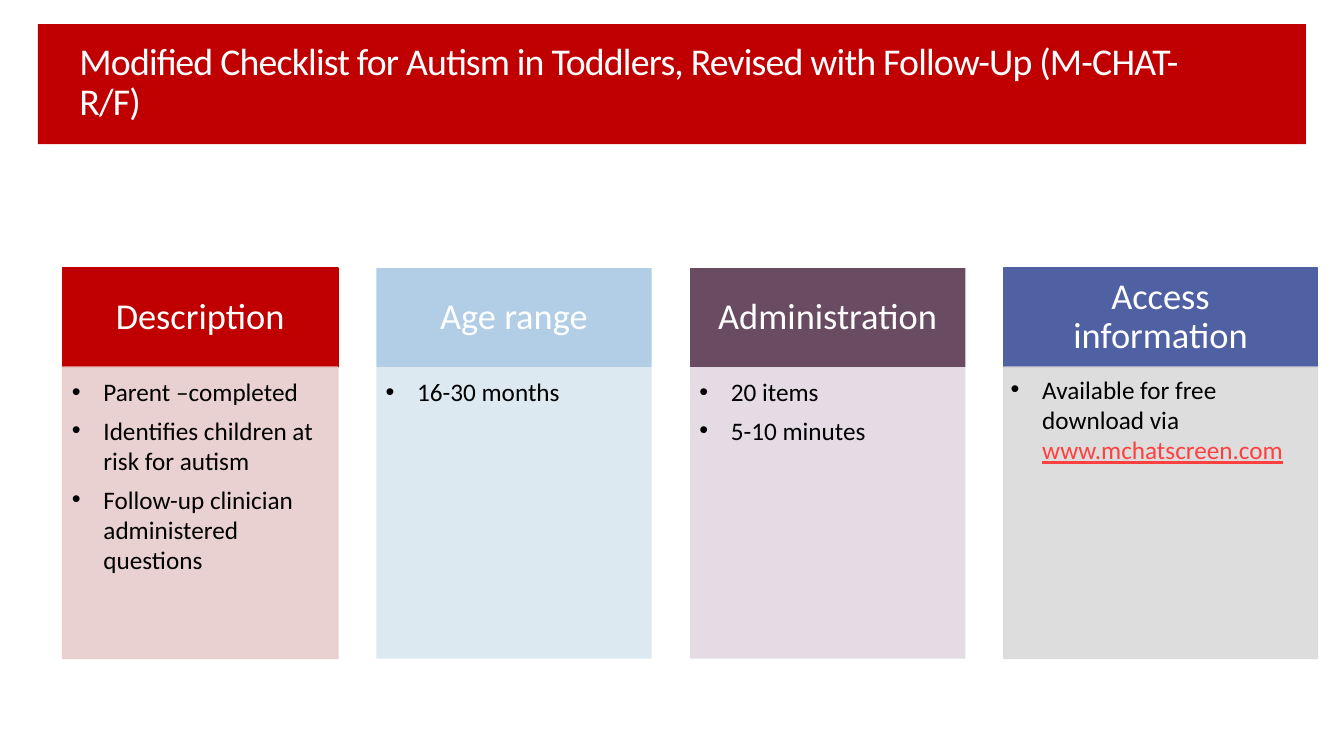
"""Build the M-CHAT-R/F overview slide with four described columns."""
from dataclasses import dataclass

from pptx import Presentation
from pptx.dml.color import RGBColor
from pptx.enum.shapes import MSO_SHAPE
from pptx.enum.text import MSO_ANCHOR as Anchor, PP_ALIGN as Align
from pptx.oxml.ns import qn
from pptx.oxml.xmlchemy import OxmlElement
from pptx.shapes.autoshape import Shape
from pptx.slide import Slide
from pptx.text.text import TextFrame, _Paragraph as Paragraph
from pptx.util import Pt

RED = RGBColor(0xC0, 0x00, 0x00)
ROSE = RGBColor(0xE8, 0xCC, 0xCC)
SKY = RGBColor(0xB2, 0xCE, 0xE7)
PALE_SKY = RGBColor(0xD9, 0xE7, 0xEF)
PLUM = RGBColor(0x6A, 0x4C, 0x62)
PALE_PLUM = RGBColor(0xE2, 0xD8, 0xE2)
INDIGO = RGBColor(0x50, 0x61, 0xA3)
GREY = RGBColor(0xDA, 0xDA, 0xDA)
LINK_RED = RGBColor(0xFF, 0x40, 0x40)
WHITE = RGBColor(0xFF, 0xFF, 0xFF)
BLACK = RGBColor(0x00, 0x00, 0x00)

COLUMN_LEFT, COLUMN_PITCH = 44.7, 224.1
HEADER_TOP, HEADER_HEIGHT, BODY_HEIGHT = 191.5, 70.7, 208.3
BULLET_INDENT = 22.5

TITLE_FORMAT = {"name": "Calibri", "size": Pt(27)}
HEADER_FORMAT = {"name": "Calibri", "size": Pt(26)}
BODY_FORMAT = {"name": "Calibri", "size": Pt(18)}
LINK_FORMAT = BODY_FORMAT | {"underline": True}

Insets = tuple[float, float, float, float]
TITLE_INSETS = (7.2, 3.6, 7.2, 3.6)
HEADER_INSETS = (14.2, 8.4, 14.2, 8.4)
BODY_INSETS = (6.7, 6.7, 9, 10)


@dataclass(frozen=True)
class Column:
    """Text, colours and measures of one column."""
    heading: str
    items: tuple[str, ...]
    header_color: RGBColor
    body_color: RGBColor
    outlined: bool = False
    width: float = 196.7
    insets: Insets = BODY_INSETS
    link: str = ""


COLUMNS = (
    Column("Description",
           ("Parent –completed", "Identifies children at risk for autism",
            "Follow-up clinician administered questions"),
           RED, ROSE, outlined=True),
    Column("Age range", ("16-30 months",), SKY, PALE_SKY),
    Column("Administration", ("20 items", "5-10 minutes"), PLUM, PALE_PLUM),
    Column("Access information", ("Available for free download via ",),
           INDIGO, GREY, outlined=True, width=224.1,
           insets=(5, 5, 6.7, 7.5), link="www.mchatscreen.com"),
)


def add_block(slide: Slide, left: float, top: float, width: float, height: float,
              color: RGBColor, outlined: bool = False) -> Shape:
    """Add a flat rectangle, with an outline of its own colour if wanted."""
    shape = slide.shapes.add_shape(MSO_SHAPE.RECTANGLE, Pt(left), Pt(top),
                                   Pt(width), Pt(height))
    shape.shadow.inherit = False
    shape.fill.solid()
    shape.fill.fore_color.rgb = color
    if outlined:
        shape.line.color.rgb = color
        shape.line.width = Pt(0.85)
    else:
        shape.line.fill.background()
    return shape


def make_translucent(shape: Shape) -> None:
    """Give the fill and line of a shape 90 % opacity."""
    for color in shape._element.spPr.findall(".//" + qn("a:srgbClr")):
        alpha = OxmlElement("a:alpha")
        alpha.set("val", "90000")
        color.append(alpha)


def set_frame(frame: TextFrame, anchor: Anchor, insets: Insets) -> None:
    """Set wrapping, anchor and margins of a text frame."""
    left, top, right, bottom = map(Pt, insets)
    frame_format = {"word_wrap": True, "vertical_anchor": anchor,
                    "margin_left": left, "margin_top": top,
                    "margin_right": right, "margin_bottom": bottom}
    for name, value in frame_format.items():
        setattr(frame, name, value)


def add_run(paragraph: Paragraph, text: str, font_format: dict, color: RGBColor,
            spacing: float = 0) -> None:
    """Append a formatted run to a paragraph."""
    run = paragraph.add_run()
    run.text = text
    for name, value in font_format.items():
        setattr(run.font, name, value)
    run.font.color.rgb = color
    if spacing:
        run._r.get_or_add_rPr().set("spc", str(round(spacing * 100)))


def add_bullet(paragraph: Paragraph) -> None:
    """Give a paragraph a round bullet and a hanging indent."""
    properties = paragraph._p.get_or_add_pPr()
    properties.set("marL", str(Pt(BULLET_INDENT)))
    properties.set("indent", str(Pt(-BULLET_INDENT)))
    font = OxmlElement("a:buFont")
    font.set("typeface", "Arial")
    bullet = OxmlElement("a:buChar")
    bullet.set("char", "•")
    properties.extend((font, bullet))


def add_title(slide: Slide) -> None:
    """Draw the red banner and the title on it."""
    add_block(slide, 27, 17.2, 905.8, 85.7, RED)
    box = slide.shapes.add_textbox(Pt(49.7), Pt(23.8), Pt(830.9), Pt(71.3))
    set_frame(box.text_frame, Anchor.MIDDLE, TITLE_INSETS)
    paragraph = box.text_frame.paragraphs[0]
    paragraph.line_spacing = 0.9
    add_run(paragraph, "Modified Checklist for Autism in Toddlers, "
            "Revised with Follow-Up (M-CHAT-R/F)", TITLE_FORMAT, WHITE, -0.6)


def add_column(slide: Slide, column: Column, left: float) -> None:
    """Draw a column heading and its bulleted body."""
    header = add_block(slide, left, HEADER_TOP, column.width, HEADER_HEIGHT,
                       column.header_color, column.outlined)
    set_frame(header.text_frame, Anchor.MIDDLE, HEADER_INSETS)
    paragraph = header.text_frame.paragraphs[0]
    paragraph.alignment = Align.CENTER
    paragraph.line_spacing = 0.9
    add_run(paragraph, column.heading, HEADER_FORMAT, WHITE)

    body = add_block(slide, left, HEADER_TOP + HEADER_HEIGHT, column.width,
                     BODY_HEIGHT, column.body_color, column.outlined)
    make_translucent(body)
    frame = body.text_frame
    set_frame(frame, Anchor.TOP, column.insets)
    for index, item in enumerate(column.items):
        paragraph = frame.add_paragraph() if index else frame.paragraphs[0]
        add_bullet(paragraph)
        paragraph.alignment = Align.LEFT
        paragraph.space_after = Pt(6)
        add_run(paragraph, item, BODY_FORMAT, BLACK)
    if column.link:
        add_run(paragraph, column.link, LINK_FORMAT, LINK_RED)


def main() -> None:
    """Create the presentation and save it."""
    presentation = Presentation()
    presentation.slide_width = Pt(960)
    presentation.slide_height = Pt(540)
    slide = presentation.slides.add_slide(presentation.slide_layouts[6])
    add_title(slide)
    for index, column in enumerate(COLUMNS):
        add_column(slide, column, COLUMN_LEFT + index * COLUMN_PITCH)
    presentation.save("out.pptx")


if __name__ == "__main__":
    main()
